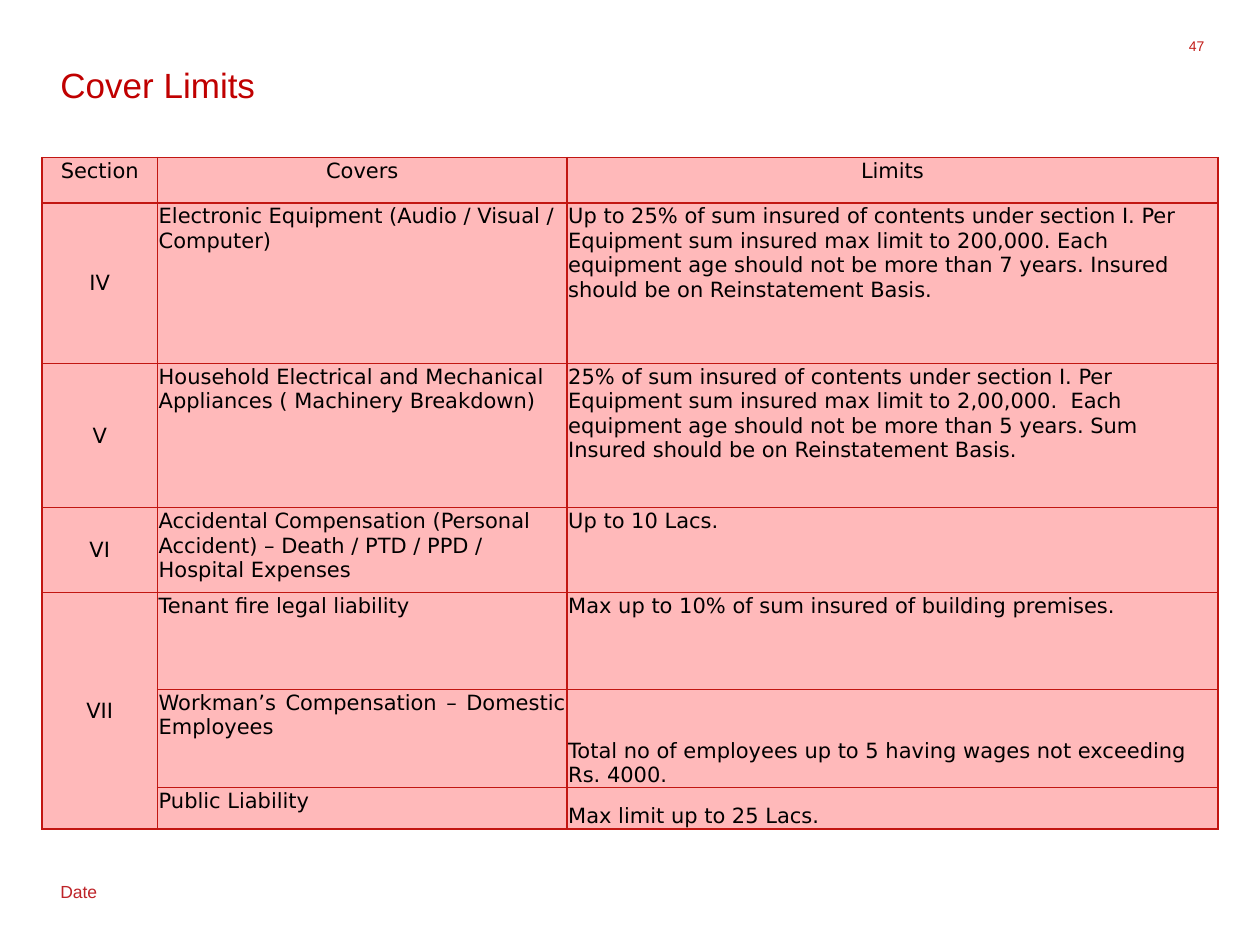
from dataclasses import dataclass

from lxml.etree import SubElement
from pptx import Presentation
from pptx.dml.color import RGBColor
from pptx.enum.text import MSO_ANCHOR, PP_ALIGN
from pptx.oxml.ns import qn
from pptx.slide import Slide
from pptx.util import Pt

COLUMNS = [66, 234, 372]
ROW_HEIGHTS = [26, 91.6, 82.6, 48.4, 55.4, 56.2, 23.6]
ROWS = [
    ("Section", "Covers", "Limits"),
    ("IV", "Electronic Equipment (Audio / Visual / Computer)",
     "Up to 25% of sum insured of contents under section I. Per Equipment sum "
     "insured max limit to 200,000. Each equipment age should not be more than "
     "7 years. Insured should be on Reinstatement Basis."),
    ("V", "Household Electrical and Mechanical Appliances ( Machinery Breakdown)",
     "25% of sum insured of contents under section I. Per Equipment sum insured "
     "max limit to 2,00,000.  Each equipment age should not be more than 5 years. "
     "Sum Insured should be on Reinstatement Basis."),
    ("VI", "Accidental Compensation (Personal Accident) – Death / PTD / PPD / "
     "Hospital Expenses", "Up to 10 Lacs."),
    ("VII", "Tenant fire legal liability",
     "Max up to 10% of sum insured of building premises."),
    ("", "Workman’s Compensation – Domestic Employees",
     "Total no of employees up to 5 having wages not exceeding Rs. 4000."),
    ("", "Public Liability", "Max limit up to 25 Lacs."),
]


def rgb(value):
    return RGBColor.from_string(value)


@dataclass
class Deck:
    s: Slide
    font: str = "Arial"
    table_font: str = "DejaVu Sans"
    table_fill: str = "FFB9BA"
    table_line: str = "C21612"

    def format_text(self, p, font, size, color, align=None):
        p.alignment = align
        for r in p.runs:
            r.font.name = font
            r.font.size = Pt(size)
            r.font.color.rgb = rgb(color)

    def text(self, box, text, size, color, align=None, inset=True, wrap=True):
        """Add a one-paragraph text box and return its paragraph."""
        tf = self.s.shapes.add_textbox(*map(Pt, box)).text_frame
        tf.word_wrap = wrap
        if not inset:
            tf.margin_left = tf.margin_right = tf.margin_top = tf.margin_bottom = 0
        tf.text = text
        p = tf.paragraphs[0]
        self.format_text(p, self.font, size, color, align)
        return p

    def border(self, cell):
        tc_pr = cell._tc.get_or_add_tcPr()
        for side in ("a:lnL", "a:lnR", "a:lnT", "a:lnB"):
            ln = SubElement(tc_pr, qn(side), w=str(Pt(0.75)))
            fill = SubElement(ln, qn("a:solidFill"))
            SubElement(fill, qn("a:srgbClr"), val=self.table_line)

    def cell(self, cell, text, align, anchor):
        cell.margin_left = cell.margin_right = cell.margin_top = Pt(0.72)
        cell.margin_bottom = 0
        cell.vertical_anchor = anchor
        self.border(cell)
        cell.fill.solid()
        cell.fill.fore_color.rgb = rgb(self.table_fill)
        p = cell.text_frame.paragraphs[0]
        p.font.size = Pt(12)
        if text:
            p.text = text
        self.format_text(p, self.table_font, 12, "000000", align)

    def table(self, left, top, rows, widths, heights):
        table = self.s.shapes.add_table(
            len(rows), len(widths), Pt(left), Pt(top),
            Pt(sum(widths)), Pt(sum(heights))).table
        for column, width in zip(table.columns, widths):
            column.width = Pt(width)
        for row, height in zip(table.rows, heights):
            row.height = Pt(height)
        for i, row in enumerate(rows):
            for j, text in enumerate(row):
                align, anchor = PP_ALIGN.LEFT, MSO_ANCHOR.TOP
                if i == 0 or j == 0:
                    align = PP_ALIGN.CENTER
                if i and j == 0:
                    anchor = MSO_ANCHOR.MIDDLE
                elif i >= 5 and j == 2:
                    anchor = MSO_ANCHOR.BOTTOM
                elif (i, j) == (5, 1):
                    align = PP_ALIGN.JUSTIFY
                self.cell(table.cell(i, j), text, align, anchor)
        return table


def main():
    prs = Presentation()
    prs.slide_width, prs.slide_height = Pt(720), Pt(540)
    deck = Deck(prs.slides.add_slide(prs.slide_layouts[6]))

    date = deck.text((27.4, 498.2, 36, 20.2), "Date", 10, "BE2328", wrap=False)
    date.line_spacing = 1.15
    date.space_after = Pt(10)
    deck.text((672.5, 21.6, 15.8, 14.4), "47", 8, "C21B17",
              PP_ALIGN.RIGHT, inset=False)
    title = deck.text((27.4, 34.6, 660, 41), "Cover Limits", 20, "C00000")
    title.line_spacing = Pt(22)

    table = deck.table(24, 90, ROWS, COLUMNS, ROW_HEIGHTS)
    table.cell(4, 0).merge(table.cell(6, 0))

    prs.save("out.pptx")


if __name__ == "__main__":
    main()
